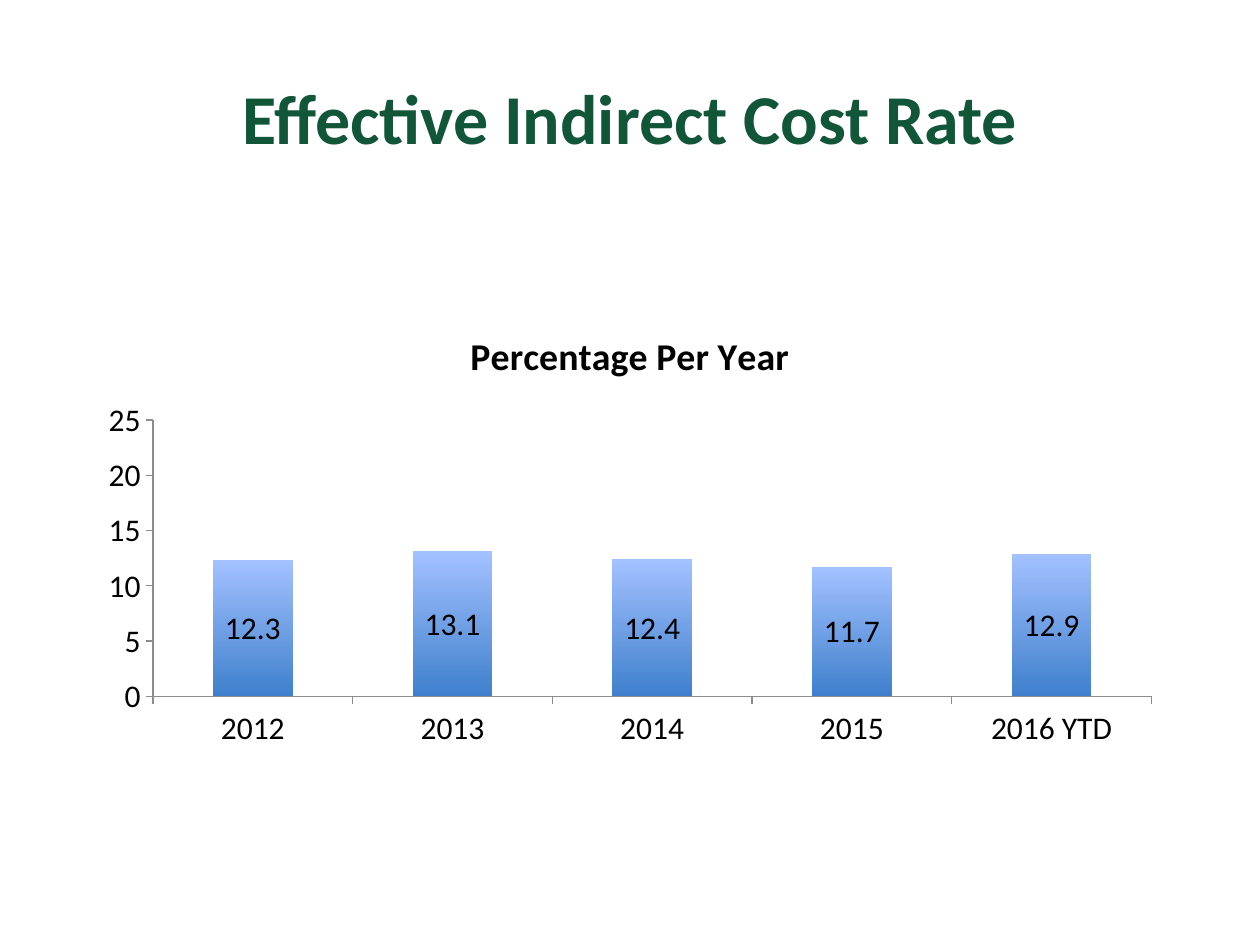
from dataclasses import dataclass

from pptx import Presentation
from pptx.chart.data import CategoryChartData
from pptx.dml.color import RGBColor
from pptx.enum.chart import XL_CHART_TYPE, XL_LABEL_POSITION, XL_TICK_MARK
from pptx.enum.text import MSO_ANCHOR, PP_ALIGN
from pptx.util import Inches, Pt

STACKED = XL_CHART_TYPE.COLUMN_STACKED
LABEL_CENTER = XL_LABEL_POSITION.CENTER
TICK_OUT, TICK_NONE = XL_TICK_MARK.OUTSIDE, XL_TICK_MARK.NONE
MIDDLE, CENTER = MSO_ANCHOR.MIDDLE, PP_ALIGN.CENTER

TITLE_ONLY_LAYOUT = 5
RATES = {"2012": 12.3, "2013": 13.1, "2014": 12.4, "2015": 11.7, "2016 YTD": 12.9}


@dataclass(frozen=True)
class Theme:
    font: str = "Calibri"
    heading: RGBColor = RGBColor(0x11, 0x56, 0x39)
    text: RGBColor = RGBColor(0, 0, 0)
    axis: RGBColor = RGBColor(0x8C, 0x8C, 0x8C)
    bar_bottom: RGBColor = RGBColor(0x3F, 0x80, 0xCD)
    bar_top: RGBColor = RGBColor(0xA3, 0xC1, 0xFF)
    heading_size: float = 40
    chart_title_size: float = 21.6
    chart_size: float = 18


def apply(target, values):
    """Set every attribute named in values on target."""
    for name, value in values.items():
        setattr(target, name, value)


class SlideBuilder:
    def __init__(self, presentation, theme):
        self.theme = theme
        self.width = presentation.slide_width
        self.height = presentation.slide_height
        layout = presentation.slide_layouts[TITLE_ONLY_LAYOUT]
        self.slide = presentation.slides.add_slide(layout)

    def box(self, left, top, width, height):
        """Turn shares of the slide's size into lengths."""
        return (int(left * self.width), int(top * self.height),
                int(width * self.width), int(height * self.height))

    def style_font(self, font, size, color, bold=False):
        apply(font, {"name": self.theme.font, "size": Pt(size), "bold": bold})
        font.color.rgb = color

    def title(self, text, shares):
        title = self.slide.shapes.title
        apply(title, dict(zip(("left", "top", "width", "height"), self.box(*shares))))
        title.text_frame.text = text
        title.text_frame.vertical_anchor = MIDDLE
        paragraph = title.text_frame.paragraphs[0]
        paragraph.alignment = CENTER
        self.style_font(paragraph.runs[0].font, self.theme.heading_size,
                        self.theme.heading, bold=True)

    def column_chart(self, name, values, shares, scale):
        theme = self.theme
        data = CategoryChartData(number_format="General")
        data.categories = list(values)
        data.add_series(name, list(values.values()))
        chart = self.slide.shapes.add_chart(STACKED, *self.box(*shares), data).chart
        self.style_font(chart.font, theme.chart_size, theme.text)
        apply(chart, {"has_legend": False, "has_title": True})
        chart.chart_title.text_frame.text = name
        chart.chart_title.include_in_layout = False
        run = chart.chart_title.text_frame.paragraphs[0].runs[0]
        self.style_font(run.font, theme.chart_title_size, theme.text, bold=True)

        for axis in (chart.category_axis, chart.value_axis):
            apply(axis, {"has_major_gridlines": False, "major_tick_mark": TICK_OUT,
                         "minor_tick_mark": TICK_NONE})
            axis.format.line.color.rgb = theme.axis
            axis.format.line.width = Pt(0.75)
        apply(chart.value_axis, scale)

        plot = chart.plots[0]
        apply(plot, {"gap_width": 150, "overlap": 100, "vary_by_categories": False,
                     "has_data_labels": True})
        apply(plot.data_labels, {"show_value": True, "position": LABEL_CENTER})
        self.style_font(plot.data_labels.font, theme.chart_size, theme.text)
        fill = plot.series[0].format.fill
        fill.gradient()
        fill.gradient_angle = 90
        for stop, color in zip(fill.gradient_stops, (theme.bar_bottom, theme.bar_top)):
            stop.color.rgb = color


def main():
    presentation = Presentation()
    presentation.slide_width, presentation.slide_height = Inches(10), Inches(7.5)
    builder = SlideBuilder(presentation, Theme())
    builder.title("Effective Indirect Cost Rate", (0.05, 0.04, 0.9, 1 / 6))
    builder.column_chart(
        "Percentage Per Year", RATES, (0.069, 0.324, 0.862, 0.476),
        {"minimum_scale": 0, "maximum_scale": 25, "major_unit": 5})
    presentation.save("out.pptx")


if __name__ == "__main__":
    main()
